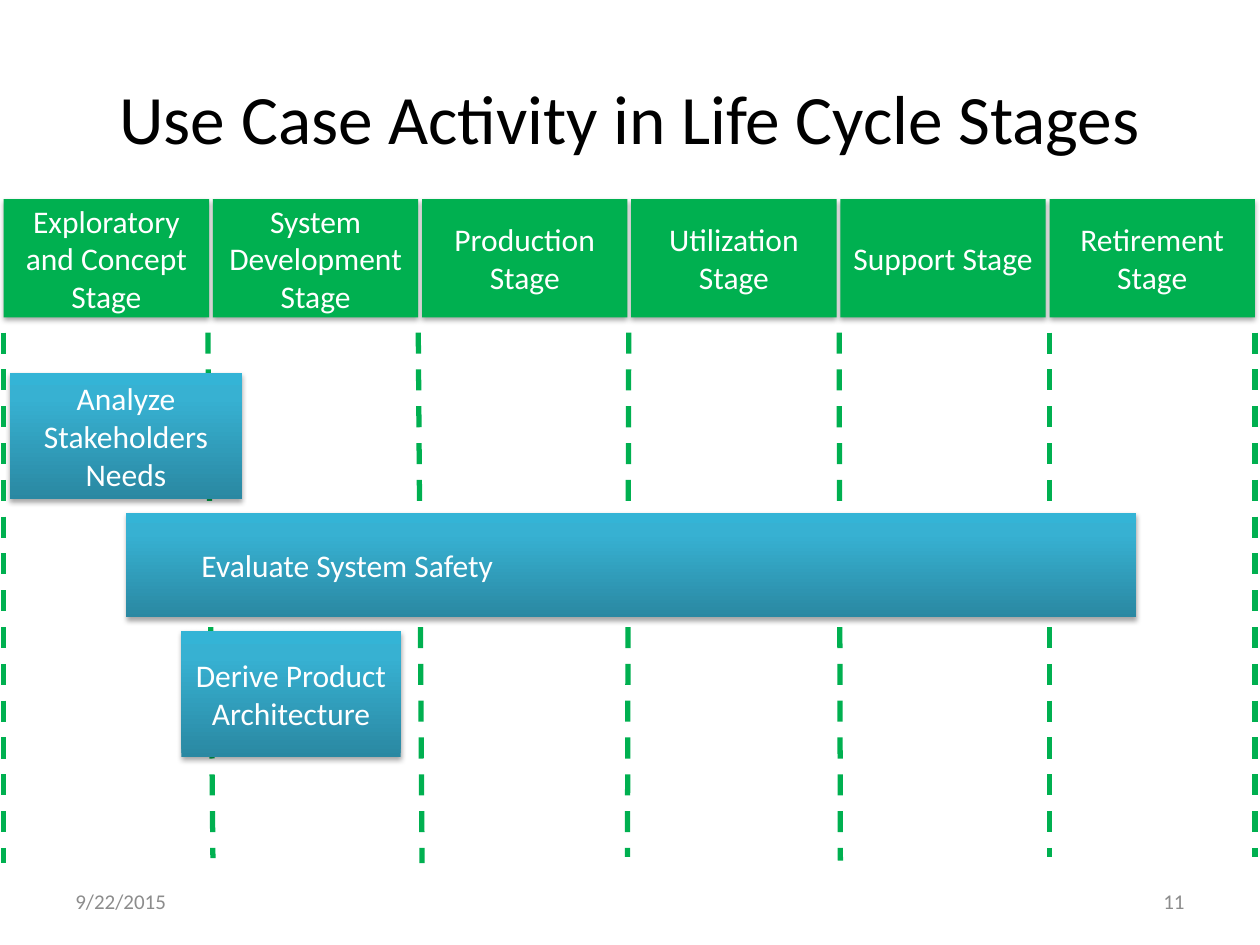
import copy
from dataclasses import dataclass

import lxml.etree
import pptx
import pptx.dml.color
import pptx.enum.dml
import pptx.enum.shapes
import pptx.enum.text
import pptx.oxml
import pptx.oxml.ns
import pptx.util

Inches = pptx.util.Inches
Align = pptx.enum.text.PP_ALIGN
qn = pptx.oxml.ns.qn


@dataclass(frozen=True)
class Theme:
    font: str = "Calibri"
    green: str = "00B050"
    black: str = "000000"
    white: str = "FFFFFF"
    gray: str = "8C8C8C"
    blues: tuple = ((0, "2A88A2"), (0.8, "37B1D2"), (1, "34B4D6"))
    title: float = 39.6
    body: float = 18
    small: float = 12


@dataclass(frozen=True)
class Box:
    text: str
    left: float
    top: float
    width: float
    height: float
    align: Align = Align.CENTER
    level: int = 0


@dataclass(frozen=True)
class Rule:
    start: float
    end: float
    bottom: float


THEME = Theme()
SHADOW = (
    '<a:outerShdw xmlns:a="http://schemas.openxmlformats.org/drawingml/2006/main" '
    'blurRad="39370" dist="22860" dir="5400000" rotWithShape="0">'
    '<a:srgbClr val="000000"><a:alpha val="35000"/></a:srgbClr></a:outerShdw>'
)

# Stage headers share one pitch
EDGE, PITCH = 0.03, 1.66
NAMES = (
    "Exploratory and Concept Stage", "System Development Stage",
    "Production Stage", "Utilization Stage", "Support Stage",
    "Retirement Stage",
)
STAGES = [Box(name, EDGE + i * PITCH, 1.58, 1.63, 0.94)
          for i, name in enumerate(NAMES)]

TASKS = (
    Box("Analyze Stakeholders Needs", 0.08, 2.96, 1.84, 1),
    Box("Evaluate System Safety", 1, 4.07, 8.02, 0.83, Align.LEFT, 1),
    Box("Derive Product Architecture", 1.44, 5.01, 1.74, 1),
)

RULE_TOP = 2.64
RULES = (
    Rule(1.65, 1.69, 6.81), Rule(3.32, 3.35, 6.85), Rule(4.99, 4.98, 6.8),
    Rule(6.66, 6.67, 6.83), Rule(8.33, 8.33, 6.8), Rule(9.96, 9.96, 6.8),
    Rule(0.03, 0.03, 6.85),
)

TITLE = Box("Use Case Activity in Life Cycle Stages", 0.5, 0.3, 9, 1.25)
DATE = Box("9/22/2015", 0.5, 6.95, 2.33, 0.4, Align.LEFT)
PAGE = Box("11", 7.17, 6.95, 2.33, 0.4, Align.RIGHT)


def color(code: str) -> pptx.dml.color.RGBColor:
    return pptx.dml.color.RGBColor.from_string(code)


def place(box: Box) -> tuple:
    return tuple(Inches(n) for n in (box.left, box.top, box.width, box.height))


def write(shape, box: Box, size: float, ink: str) -> None:
    frame = shape.text_frame
    frame.word_wrap = True
    frame.vertical_anchor = pptx.enum.text.MSO_ANCHOR.MIDDLE
    para = frame.paragraphs[0]
    para.text = box.text
    para.alignment = box.align
    if box.level:
        para.level = box.level
        props = para._p.get_or_add_pPr()
        props.set("marL", str(Inches(0.5 * box.level)))
        props.set("indent", "0")
    para.font.name = THEME.font
    para.font.size = pptx.util.Pt(size)
    para.font.color.rgb = color(ink)


def label(slide, box: Box, size: float, ink: str) -> None:
    write(slide.shapes.add_textbox(*place(box)), box, size, ink)


def shade(shape) -> None:
    """Fill upwards from dark to light with the theme's blues."""
    fill = shape.fill
    fill.gradient()
    fill.gradient_angle = 90
    stops = shape._element.spPr.find(".//" + qn("a:gsLst"))
    stops.insert(1, copy.deepcopy(stops[0]))
    for stop, (pos, code) in zip(fill.gradient_stops, THEME.blues):
        stop.position = pos
        stop.color.rgb = color(code)


def block(slide, box: Box, blue: bool) -> None:
    kind = pptx.enum.shapes.MSO_SHAPE.RECTANGLE
    shape = slide.shapes.add_shape(kind, *place(box))
    if blue:
        shade(shape)
    else:
        shape.fill.solid()
        shape.fill.fore_color.rgb = color(THEME.green)
    shape.line.fill.background()
    shape.shadow.inherit = False
    effects = shape._element.spPr.find(qn("a:effectLst"))
    effects.append(pptx.oxml.parse_xml(SHADOW))
    write(shape, box, THEME.body, THEME.white)


def divide(slide, rule: Rule) -> None:
    line = slide.shapes.add_connector(
        pptx.enum.shapes.MSO_CONNECTOR.STRAIGHT,
        Inches(rule.start), Inches(RULE_TOP),
        Inches(rule.end), Inches(rule.bottom))
    line.line.color.rgb = color(THEME.green)
    line.line.width = pptx.util.Pt(3)
    line.line.dash_style = pptx.enum.dml.MSO_LINE.DASH
    lxml.etree.SubElement(line._element.spPr, qn("a:effectLst"))


def main() -> None:
    deck = pptx.Presentation()
    deck.slide_width, deck.slide_height = Inches(10), Inches(7.5)
    slide = deck.slides.add_slide(deck.slide_layouts[6])

    # Stage dividers, behind everything
    for rule in RULES:
        divide(slide, rule)

    # Title and footer
    label(slide, TITLE, THEME.title, THEME.black)
    for box in (DATE, PAGE):
        label(slide, box, THEME.small, THEME.gray)

    # Activities, then stage headers
    for box in TASKS:
        block(slide, box, True)
    for box in STAGES:
        block(slide, box, False)

    deck.save("out.pptx")


if __name__ == "__main__":
    main()
